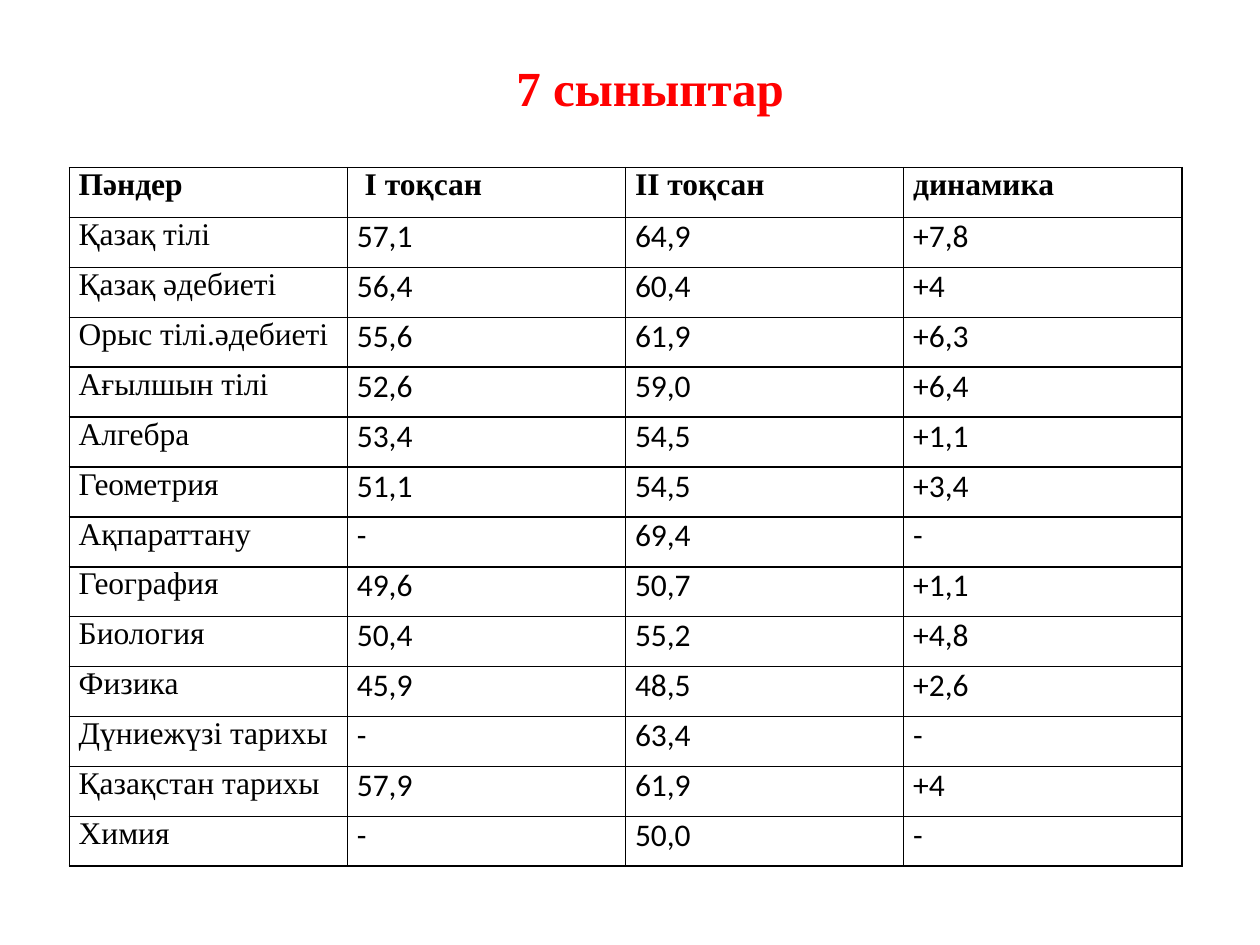
import dataclasses

import lxml.etree
import pptx
import pptx.dml.color
import pptx.enum.shapes
import pptx.enum.text
import pptx.oxml.ns
import pptx.util

Pt = pptx.util.Pt
Align = pptx.enum.text.PP_ALIGN

COLORS = {"paper": "FFFFFF", "ink": "000000", "title": "FF0000"}
SERIF = "Times New Roman"
SANS = "Calibri"
HEADINGS = ("Пәндер", " I тоқсан", "II тоқсан", "динамика")
TABLE_LEFT, TABLE_TOP = 39.6, 95.76
TABLE_WIDTH, TABLE_HEIGHT = 635.76, 399.6


@dataclasses.dataclass(frozen=True)
class Subject:
    name: str
    first_term: str
    second_term: str
    change: str


@dataclasses.dataclass(frozen=True)
class TextStyle:
    font: str
    size: float
    color: str
    bold: bool
    align: Align


TITLE = TextStyle(SERIF, 28, "title", True, Align.CENTER)
HEADING = TextStyle(SERIF, 18, "ink", True, Align.JUSTIFY)
NAME = TextStyle(SERIF, 18, "ink", False, Align.JUSTIFY)
VALUE = TextStyle(SANS, 18, "ink", False, Align.LEFT)

SUBJECTS = (
    Subject("Қазақ тілі", "57,1", "64,9", "+7,8"),
    Subject("Қазақ әдебиеті", "56,4", "60,4", "+4"),
    Subject("Орыс тілі.әдебиеті", "55,6", "61,9", "+6,3"),
    Subject("Ағылшын тілі", "52,6", "59,0", "+6,4"),
    Subject("Алгебра", "53,4", "54,5", "+1,1"),
    Subject("Геометрия", "51,1", "54,5", "+3,4"),
    Subject("Ақпараттану", "-", "69,4", "-"),
    Subject("География", "49,6", "50,7", "+1,1"),
    Subject("Биология", "50,4", "55,2", "+4,8"),
    Subject("Физика", "45,9", "48,5", "+2,6"),
    Subject("Дүниежүзі тарихы", "-", "63,4", "-"),
    Subject("Қазақстан тарихы", "57,9", "61,9", "+4"),
    Subject("Химия", "-", "50,0", "-"),
)


def rgb(name: str) -> pptx.dml.color.RGBColor:
    return pptx.dml.color.RGBColor.from_string(COLORS[name])


def write_text(frame, text: str, style: TextStyle) -> None:
    frame.text = text
    para = frame.paragraphs[0]
    para.alignment = style.align
    for span in para.runs:
        span.font.name = style.font
        span.font.size = Pt(style.size)
        span.font.bold = style.bold
        span.font.color.rgb = rgb(style.color)


def add_borders(cell) -> None:
    qn = pptx.oxml.ns.qn
    properties = cell._tc.get_or_add_tcPr()
    for side in ("L", "R", "T", "B"):
        line = lxml.etree.SubElement(properties, qn(f"a:ln{side}"), w=str(int(Pt(1))))
        fill = lxml.etree.SubElement(line, qn("a:solidFill"))
        lxml.etree.SubElement(fill, qn("a:srgbClr"), val=COLORS["ink"])


def fill_cell(cell, text: str, style: TextStyle) -> None:
    cell.margin_left = cell.margin_right = Pt(5.4)
    cell.margin_top = cell.margin_bottom = Pt(0)
    write_text(cell.text_frame, text, style)
    add_borders(cell)
    cell.fill.background()


def add_results_table(page) -> None:
    row_count, column_count = len(SUBJECTS) + 1, len(HEADINGS)
    table = page.shapes.add_table(
        row_count, column_count,
        Pt(TABLE_LEFT), Pt(TABLE_TOP), Pt(TABLE_WIDTH), Pt(TABLE_HEIGHT),
    ).table
    table.first_row = table.horz_banding = False
    for column in table.columns:
        column.width = Pt(TABLE_WIDTH / column_count)
    for row in table.rows:
        row.height = Pt(TABLE_HEIGHT / row_count)
    for column, heading in enumerate(HEADINGS):
        fill_cell(table.cell(0, column), heading, HEADING)
    for row, subject in enumerate(SUBJECTS, start=1):
        for column, text in enumerate(dataclasses.astuple(subject)):
            fill_cell(table.cell(row, column), text, VALUE if column else NAME)


def add_title(page) -> None:
    box = page.shapes.add_shape(
        pptx.enum.shapes.MSO_SHAPE.RECTANGLE, Pt(95.76), Pt(0), Pt(551.52), Pt(92.16)
    )
    box.shadow.inherit = False
    box.fill.solid()
    box.fill.fore_color.rgb = rgb("paper")
    box.line.fill.background()
    frame = box.text_frame
    frame.word_wrap = True
    frame.vertical_anchor = pptx.enum.text.MSO_ANCHOR.MIDDLE
    frame.margin_top, frame.margin_bottom = Pt(10.6), Pt(3.6)
    write_text(frame, "7 сыныптар", TITLE)


def main() -> None:
    deck = pptx.Presentation()
    deck.slide_width, deck.slide_height = Pt(720), Pt(540)
    page = deck.slides.add_slide(deck.slide_layouts[6])
    page.background.fill.solid()
    page.background.fill.fore_color.rgb = rgb("paper")
    add_results_table(page)
    add_title(page)
    deck.save("out.pptx")


if __name__ == "__main__":
    main()
